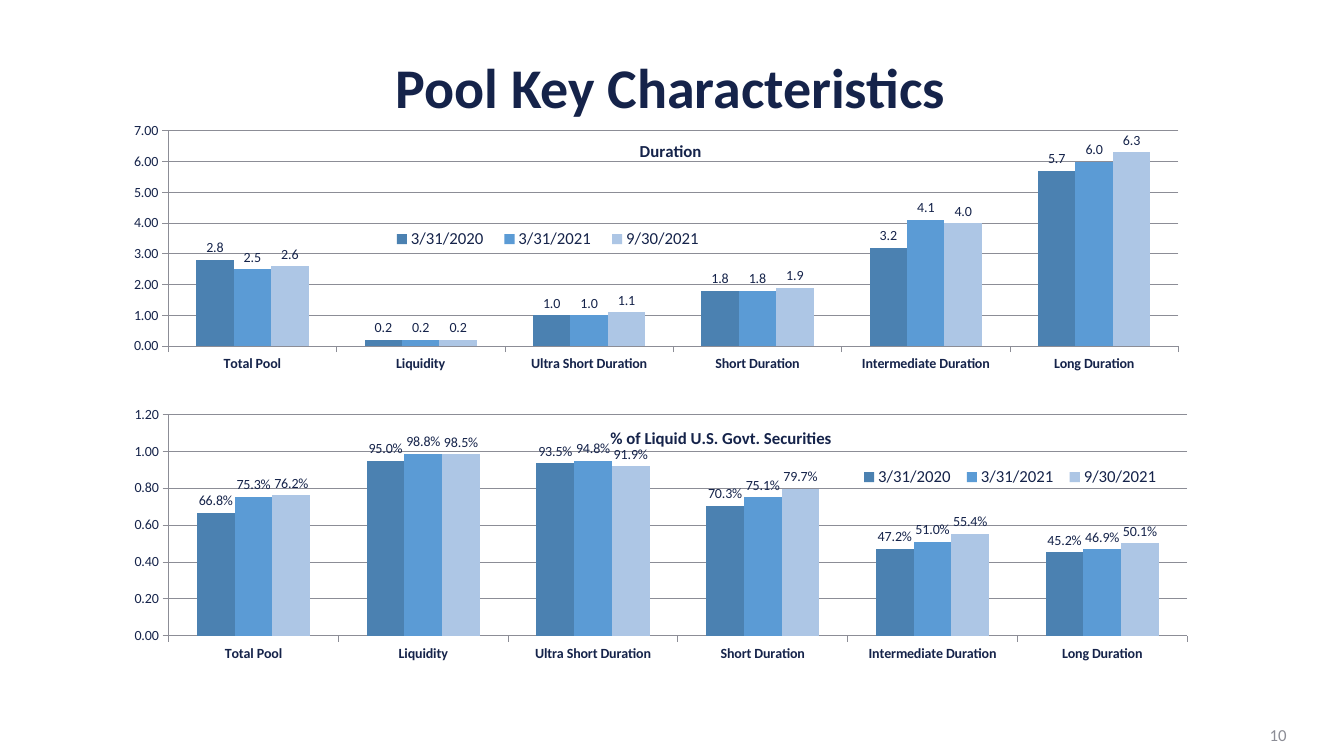
from dataclasses import dataclass

from lxml.etree import SubElement
from pptx import Presentation
from pptx.chart.data import CategoryChartData as ChartData
from pptx.dml.color import RGBColor as RGB
from pptx.enum.chart import XL_CHART_TYPE as ChartType
from pptx.enum.chart import XL_LABEL_POSITION as LabelPos
from pptx.enum.chart import XL_LEGEND_POSITION as LegendPos
from pptx.enum.chart import XL_TICK_MARK as Tick
from pptx.enum.text import MSO_ANCHOR as Anchor
from pptx.enum.text import PP_ALIGN as Align
from pptx.oxml import parse_xml
from pptx.oxml.ns import nsdecls, qn
from pptx.util import Inches, Pt


@dataclass(frozen=True)
class Theme:
    font: str = "Calibri"
    navy: RGB = RGB(0x15, 0x23, 0x4A)
    gray: RGB = RGB(0x8C, 0x8D, 0x96)
    bars: tuple = (RGB(0x4B, 0x81, 0xB1), RGB(0x5B, 0x9B, 0xD5),
                   RGB(0xAD, 0xC6, 0xE5))
    head: int = 40
    body: int = 12
    small: int = 10
    line: float = 0.5


THEME = Theme()
POOLS = ("Total Pool", "Liquidity", "Ultra Short Duration",
         "Short Duration", "Intermediate Duration", "Long Duration")
DATES = ("3/31/2020", "3/31/2021", "9/30/2021")
PLOT = (0.048, 0.057, 0.91, 0.822)


@dataclass(frozen=True)
class Panel:
    """One chart; title and legend places are fractions of its box."""
    title: str
    rows: tuple
    top: float
    step: float
    labels: str
    spot: tuple
    legend: tuple


DURATION = Panel(
    "Duration",
    ((2.8, 0.2, 1.0, 1.8, 3.2, 5.7),
     (2.5, 0.2, 1.0, 1.8, 4.1, 6.0),
     (2.6, 0.2, 1.1, 1.9, 4.0, 6.3)),
    7, 1, "#,##0.0", (0.47, 0.08), (0.24, 0.42, 0.3, 0.1))
LIQUID = Panel(
    "% of Liquid U.S. Govt. Securities",
    ((0.668, 0.95, 0.935, 0.703, 0.472, 0.452),
     (0.753, 0.988, 0.948, 0.751, 0.51, 0.469),
     (0.762, 0.985, 0.919, 0.797, 0.554, 0.501)),
    1.2, 0.2, "0.0%", (0.44, 0.09), (0.66, 0.24, 0.28, 0.1))


def style(font, size, color=THEME.navy, bold=False):
    font.name = THEME.font
    font.size = Pt(size)
    font.bold = bold
    font.color.rgb = color


def rule(line):
    line.color.rgb = THEME.gray
    line.width = Pt(THEME.line)


def place(node, mark, spot, inner=False):
    """Pin a chart part by a manual layout put before its child named mark."""
    old = node.find(qn("c:layout"))
    if old is not None:
        node.remove(old)
    layout = parse_xml(f"<c:layout {nsdecls('c')}><c:manualLayout/></c:layout>")
    pairs = [("layoutTarget", "inner")] if inner else []
    pairs += [("xMode", "edge"), ("yMode", "edge")]
    pairs += zip("xywh", spot)
    for name, value in pairs:
        SubElement(layout[0], qn(f"c:{name}")).set("val", str(value))
    node.find(qn(mark)).addprevious(layout)


def add_head(slide, text, box):
    title = slide.shapes.title
    title.left, title.top, title.width, title.height = map(Inches, box)
    frame = title.text_frame
    frame.text = text
    frame.vertical_anchor = Anchor.MIDDLE
    para = frame.paragraphs[0]
    para.alignment = Align.CENTER
    para.line_spacing = 0.9
    style(para.runs[0].font, THEME.head, bold=True)


def style_axes(chart, panel):
    for axis in (chart.category_axis, chart.value_axis):
        axis.major_tick_mark = Tick.OUTSIDE
        axis.minor_tick_mark = Tick.NONE
        rule(axis.format.line)
    style(chart.category_axis.tick_labels.font, THEME.small, bold=True)
    scale = chart.value_axis
    scale.minimum_scale, scale.maximum_scale = 0, panel.top
    scale.major_unit = panel.step
    scale.has_major_gridlines = True
    rule(scale.major_gridlines.format.line)
    style(scale.tick_labels.font, THEME.small)
    scale.tick_labels.number_format = "#,##0.00"
    scale.tick_labels.number_format_is_linked = False


def style_bars(plot, panel):
    plot.gap_width, plot.overlap = 150, 0
    plot.vary_by_categories = False
    for series, color in zip(plot.series, THEME.bars):
        series.format.fill.solid()
        series.format.fill.fore_color.rgb = color
        labels = series.data_labels
        labels.show_value = True
        labels.position = LabelPos.OUTSIDE_END
        labels.number_format = panel.labels
        labels.number_format_is_linked = False
        style(labels.font, THEME.small)


def add_panel(slide, panel, box):
    data = ChartData()
    data.categories = POOLS
    for date, row in zip(DATES, panel.rows):
        data.add_series(date, row)
    chart = slide.shapes.add_chart(
        ChartType.COLUMN_CLUSTERED, *map(Inches, box), data).chart
    style(chart.font, THEME.small)
    style_axes(chart, panel)
    style_bars(chart.plots[0], panel)

    chart.has_title = True
    frame = chart.chart_title.text_frame
    frame.text = panel.title
    style(frame.paragraphs[0].runs[0].font, THEME.body, bold=True)
    chart.has_legend = True
    chart.legend.position = LegendPos.RIGHT
    chart.legend.include_in_layout = False
    style(chart.legend.font, THEME.body)

    root = chart.element.find(qn("c:chart"))
    head = root.find(qn("c:title"))
    head.find(qn("c:overlay")).set("val", "1")
    place(head, "c:overlay", panel.spot)
    place(root.find(f"{qn('c:plotArea')}/{qn('c:legend')}/..")
          or root.find(qn("c:plotArea")), "c:barChart", PLOT, inner=True)
    place(root.find(qn("c:legend")), "c:overlay", panel.legend)


def add_number(slide, text, box):
    frame = slide.shapes.add_textbox(*map(Inches, box)).text_frame
    frame.word_wrap = True
    frame.vertical_anchor = Anchor.MIDDLE
    frame.text = text
    para = frame.paragraphs[0]
    para.alignment = Align.RIGHT
    style(para.runs[0].font, THEME.body, THEME.gray)


def main():
    deck = Presentation()
    deck.slide_width, deck.slide_height = Inches(13.33), Inches(7.5)
    slide = deck.slides.add_slide(deck.slide_layouts[5])
    add_head(slide, "Pool Key Characteristics", (0.9, 0.53, 11.5, 0.73))
    add_panel(slide, DURATION, (1.14, 1.15, 11.01, 2.6))
    add_panel(slide, LIQUID, (1.14, 3.96, 11.1, 2.67))
    add_number(slide, "10", (9.86, 7.09, 3, 0.4))
    deck.save("out.pptx")


if __name__ == "__main__":
    main()
